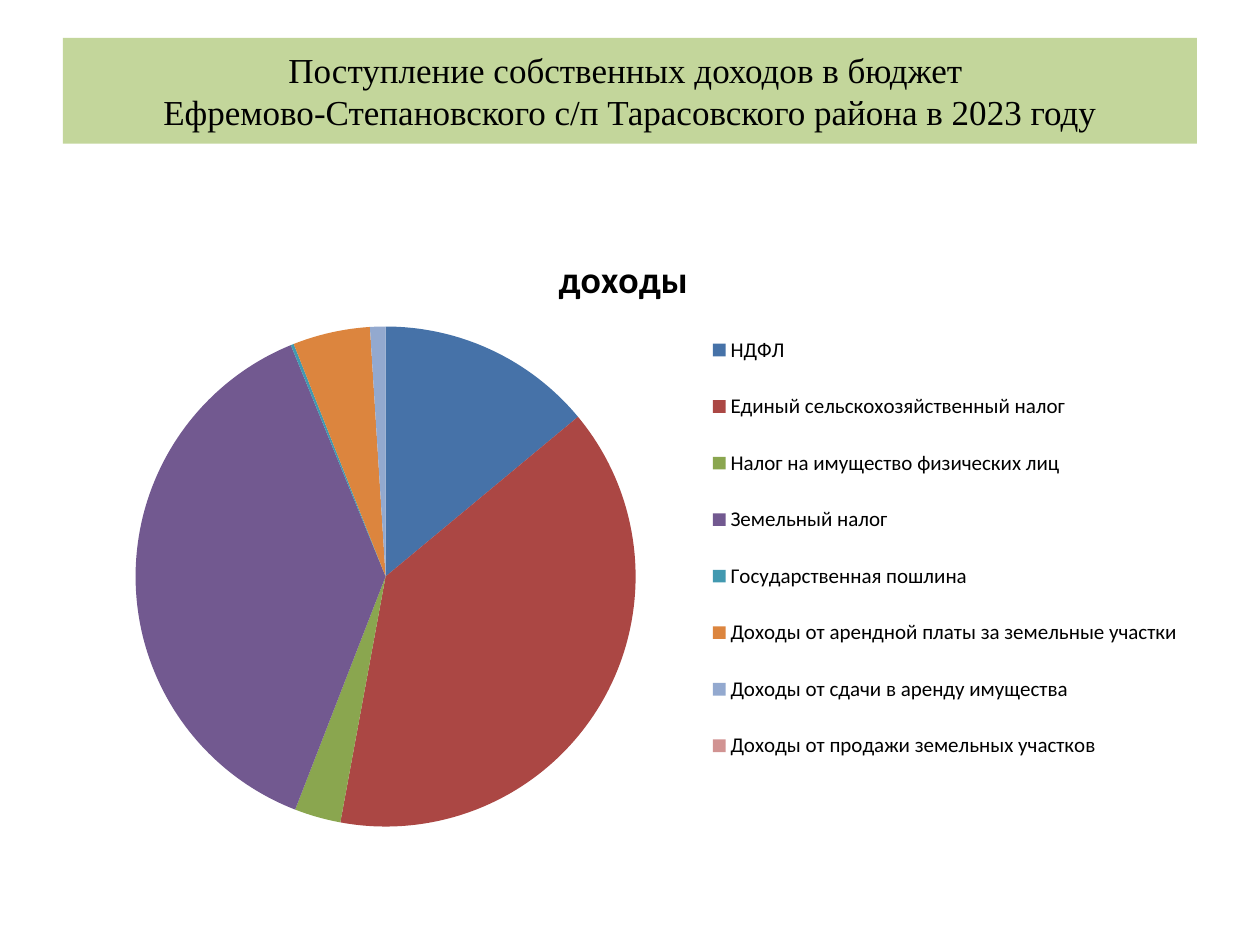
from typing import NamedTuple

from lxml.etree import SubElement
from pptx import Presentation
from pptx.chart.chart import Chart
from pptx.chart.data import CategoryChartData
from pptx.dml.color import RGBColor
from pptx.enum.chart import XL_CHART_TYPE, XL_LEGEND_POSITION
from pptx.enum.text import MSO_ANCHOR, PP_ALIGN
from pptx.oxml.ns import qn
from pptx.util import Inches, Pt


class Slice(NamedTuple):
    name: str
    value: float
    color: str


class Box(NamedTuple):
    x: float
    y: float
    w: float = 0
    h: float = 0


SLICES = [
    Slice("НДФЛ", 14, "4672A8"),
    Slice("Единый сельскохозяйственный налог", 39, "AB4744"),
    Slice("Налог на имущество физических лиц", 3, "8AA64F"),
    Slice("Земельный налог", 38, "725990"),
    Slice("Государственная пошлина", 0.2, "4299B0"),
    Slice("Доходы от арендной платы за земельные участки", 5, "DC853E"),
    Slice("Доходы от сдачи в аренду имущества", 1, "93A9CF"),
    Slice("Доходы от продажи земельных участков", 0, "D19392"),
]
FRAME = Box(0.5, 1.75, 9, 4.95)


def paint(target, color: str) -> None:
    target.solid()
    target.fore_color.rgb = RGBColor.from_string(color)


def place(part, box: Box, inner: bool = False) -> None:
    for old in part.findall(qn("c:layout")):
        part.remove(old)
    layout = SubElement(part, qn("c:layout"))
    manual = SubElement(layout, qn("c:manualLayout"))
    rules = {"layoutTarget": "inner"} if inner else {}
    rules |= {"xMode": "edge", "yMode": "edge"}
    rules["x"] = (box.x - FRAME.x) / FRAME.w
    rules["y"] = (box.y - FRAME.y) / FRAME.h
    if box.w:
        rules |= {"w": box.w / FRAME.w, "h": box.h / FRAME.h}
    for tag, value in rules.items():
        text = value if isinstance(value, str) else f"{value:.3f}"
        SubElement(manual, qn(f"c:{tag}")).set("val", text)
    if inner:
        part.insert(0, layout)
    else:
        part.find(qn("c:overlay")).addprevious(layout)


def add_title(slide) -> None:
    title = slide.shapes.add_textbox(Inches(0.5), Inches(0.3), Inches(9), Inches(0.84))
    paint(title.fill, "C3D69B")
    frame = title.text_frame
    frame.word_wrap = True
    frame.vertical_anchor = MSO_ANCHOR.MIDDLE
    line = frame.paragraphs[0]
    line.text = (
        "Поступление собственных доходов в бюджет \v"
        "Ефремово-Степановского с/п Тарасовского района в 2023 году"
    )
    line.alignment = PP_ALIGN.CENTER
    line.font.name = "Times New Roman"
    line.font.size = Pt(20)
    paint(line.font.fill, "000000")


def style_text(chart: Chart) -> None:
    chart.font.name = "Calibri"
    chart.font.size = Pt(18)
    paint(chart.font.fill, "000000")
    chart.has_title = True
    title = chart.chart_title
    title.include_in_layout = False
    head = title.text_frame.paragraphs[0]
    head.text = "доходы"
    head.font.size = Pt(21.6)
    head.font.bold = True
    chart.has_legend = True
    legend = chart.legend
    legend.position = XL_LEGEND_POSITION.RIGHT
    legend.include_in_layout = False
    legend.font.size = Pt(12)


def add_pie(slide) -> None:
    data = CategoryChartData()
    data.categories = [item.name for item in SLICES]
    data.add_series("доходы", [item.value for item in SLICES])
    sides = [Inches(side) for side in FRAME]
    chart = slide.shapes.add_chart(XL_CHART_TYPE.PIE, *sides, data).chart
    style_text(chart)
    plot = chart.plots[0]
    plot.vary_by_categories = True
    for index, item in enumerate(SLICES):
        paint(plot.series[0].points[index].format.fill, item.color)
    root = chart.element.find(qn("c:chart"))
    place(root.find(qn("c:title")), Box(4.38, 1.95))
    place(root.find(qn("c:plotArea")), Box(1.08, 2.59, 3.97, 3.97), inner=True)
    place(root.find(qn("c:legend")), Box(5.6, 2.43, 3.8, 3.84))


def main() -> None:
    deck = Presentation()
    deck.slide_width = Inches(10)
    deck.slide_height = Inches(7.5)
    slide = deck.slides.add_slide(deck.slide_layouts[6])
    add_title(slide)
    add_pie(slide)
    deck.save("out.pptx")


if __name__ == "__main__":
    main()
